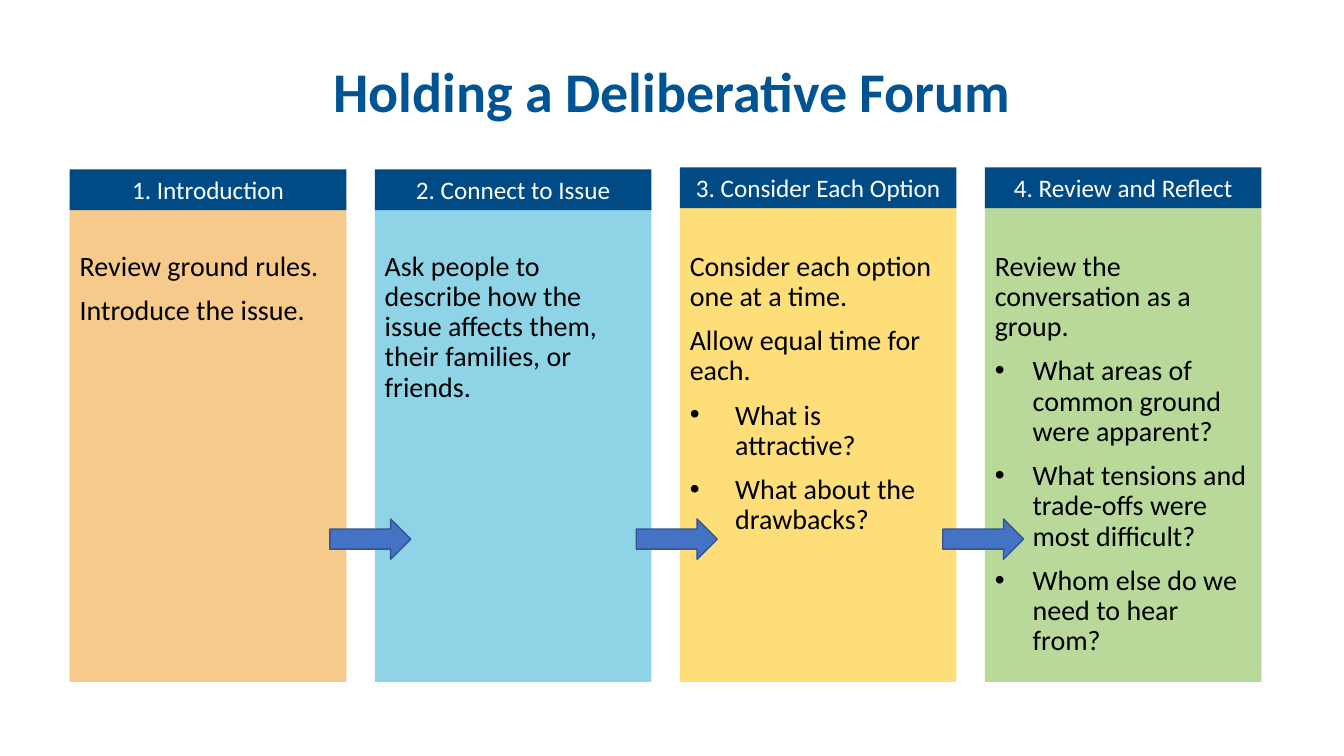
import pptx
import pptx.dml.color
import pptx.enum.shapes
import pptx.enum.text
import pptx.oxml
import pptx.oxml.ns
import pptx.util

Pt = pptx.util.Pt
RGBColor = pptx.dml.color.RGBColor
MSO_SHAPE = pptx.enum.shapes.MSO_SHAPE
ANCHOR = pptx.enum.text.MSO_ANCHOR
ALIGN = pptx.enum.text.PP_ALIGN
AUTO_SIZE = pptx.enum.text.MSO_AUTO_SIZE

TITLE_BLUE = RGBColor(0x00, 0x54, 0x93)
HEADER_BLUE = RGBColor(0x00, 0x4A, 0x85)
ARROW_BLUE = RGBColor(0x44, 0x72, 0xC4)
ARROW_EDGE = RGBColor(0x32, 0x54, 0x91)
ORANGE = RGBColor(0xF0, 0xA8, 0x3C)
AQUA = RGBColor(0x5F, 0xC2, 0xDC)
YELLOW = RGBColor(0xFD, 0xDB, 0x6B)
GREEN = RGBColor(0x95, 0xC6, 0x65)
BLACK = RGBColor(0, 0, 0)
WHITE = RGBColor(0xFF, 0xFF, 0xFF)

STAGES = [
    ("1. Introduction", ORANGE, 60, 0,
     ["Review ground rules.", "Introduce the issue."], []),
    ("2. Connect to Issue", AQUA, 70, 0,
     ["Ask people to describe how the issue affects them, their families, or friends."], []),
    ("3. Consider Each Option", YELLOW, 90, 32.4,
     ["Consider each option one at a time.", "Allow equal time for each."],
     ["What is attractive?", "What about the drawbacks?"]),
    ("4. Review and Reflect", GREEN, 65, 27,
     ["Review the conversation as a group."],
     ["What areas of common ground were apparent?",
      "What tensions and trade-offs were most difficult?",
      "Whom else do we need to hear from?"]),
]
COLUMN_LEFT, COLUMN_PITCH, COLUMN_WIDTH = 49.8, 217.9, 197.6
HEADER_TOPS = [121, 121, 119.6, 119.6]
ARROW_LEFT, ARROW_PITCH = 235.6, 218.9


def apply(target, values):
    for name, value in values.items():
        setattr(target, name, value)


class ForumSlide:
    title_font = {"name": "Calibri", "size": Pt(40), "bold": True}
    header_font = {"name": "Calibri", "size": Pt(18)}
    body_font = {"name": "Calibri", "size": Pt(20)}
    body_spacing = {"alignment": ALIGN.LEFT, "line_spacing": 0.9}
    body_frame = {"word_wrap": True, "vertical_anchor": ANCHOR.TOP, "margin_top": Pt(35.6)}
    header_frame = {"word_wrap": True, "vertical_anchor": ANCHOR.MIDDLE,
                    "auto_size": AUTO_SIZE.SHAPE_TO_FIT_TEXT}

    def __init__(self, deck):
        self.slide = deck.slides.add_slide(deck.slide_layouts[5])

    def wording(self, paragraph, words, font, color):
        run = paragraph.add_run()
        run.text = words
        apply(run.font, font)
        run.font.color.rgb = color

    def title(self, words):
        heading = self.slide.shapes.title
        apply(heading, {"left": Pt(66), "top": Pt(15), "width": Pt(828), "height": Pt(104.4)})
        apply(heading.text_frame, {"word_wrap": True, "vertical_anchor": ANCHOR.MIDDLE})
        line = heading.text_frame.paragraphs[0]
        apply(line, {"alignment": ALIGN.CENTER, "line_spacing": 0.9})
        self.wording(line, words, self.title_font, TITLE_BLUE)

    def block(self, preset, left, top, width, height, color):
        block = self.slide.shapes.add_shape(preset, Pt(left), Pt(top), Pt(width), Pt(height))
        block.shadow.inherit = False
        block.fill.solid()
        block.fill.fore_color.rgb = color
        block.line.fill.background()
        return block

    def bullet(self, paragraph, indent):
        properties = paragraph._p.get_or_add_pPr()
        properties.set("marL", str(Pt(indent)))
        properties.set("indent", str(-Pt(indent)))
        for tag, attribute, value in (("a:buFont", "typeface", "Arial"), ("a:buChar", "char", "•")):
            mark = pptx.oxml.ns.qn(tag)
            properties.append(properties.makeelement(mark, {attribute: value}))

    def column(self, left, color, opacity, indent, statements, questions):
        panel = self.block(MSO_SHAPE.RECTANGLE, left, 144.4, COLUMN_WIDTH, 342.7, color)
        tint = panel._element.spPr.find(".//" + pptx.oxml.ns.qn("a:srgbClr"))
        alpha = tint.makeelement(pptx.oxml.ns.qn("a:alpha"), {"val": str(opacity * 1000)})
        tint.append(alpha)
        frame = panel.text_frame
        apply(frame, self.body_frame)
        for index, words in enumerate(statements + questions):
            paragraph = frame.add_paragraph() if index else frame.paragraphs[0]
            apply(paragraph, self.body_spacing)
            paragraph.space_before = Pt(10 if index else 0)
            if index >= len(statements):
                self.bullet(paragraph, indent)
            self.wording(paragraph, words, self.body_font, BLACK)

    def header(self, left, top, words):
        band = self.block(MSO_SHAPE.RECTANGLE, left, top, COLUMN_WIDTH, 29.1, HEADER_BLUE)
        apply(band.text_frame, self.header_frame)
        line = band.text_frame.paragraphs[0]
        line.alignment = ALIGN.CENTER
        self.wording(line, words, self.header_font, WHITE)

    def arrow(self, left):
        arrow = self.block(MSO_SHAPE.RIGHT_ARROW, left, 370.7, 57.8, 28.8, ARROW_BLUE)
        arrow.line.color.rgb = ARROW_EDGE
        arrow.line.width = Pt(1)


def main():
    deck = pptx.Presentation()
    apply(deck, {"slide_width": Pt(960), "slide_height": Pt(540)})
    forum = ForumSlide(deck)
    forum.title("Holding a Deliberative Forum")
    lefts = [COLUMN_LEFT + COLUMN_PITCH * index for index in range(len(STAGES))]
    for left, (_, *content) in zip(lefts, STAGES):
        forum.column(left, *content)
    for left, top, stage in zip(lefts, HEADER_TOPS, STAGES):
        forum.header(left, top, stage[0])
    for index in range(len(STAGES) - 1):
        forum.arrow(ARROW_LEFT + ARROW_PITCH * index)
    deck.save("out.pptx")


if __name__ == "__main__":
    main()
